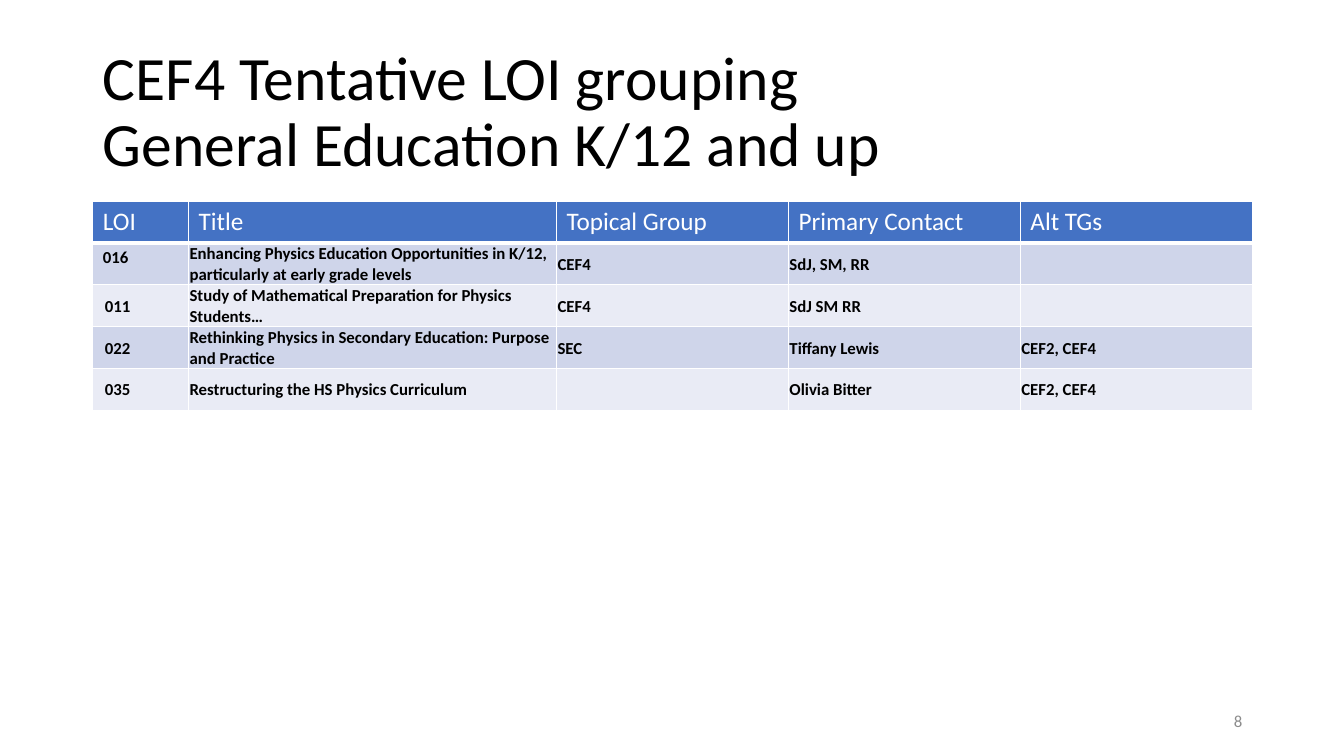
from dataclasses import dataclass

from lxml.etree import SubElement
from pptx import Presentation
from pptx.dml.color import RGBColor
from pptx.enum.text import MSO_ANCHOR, MSO_AUTO_SIZE, PP_ALIGN
from pptx.oxml.ns import qn
from pptx.util import Inches, Pt


@dataclass(frozen=True)
class Theme:
    font: str = "Calibri"
    ink: str = "000000"
    white: str = "FFFFFF"
    grey: str = "8C8C8C"
    header: str = "4472C4"
    bands: tuple = ("CFD5EA", "E9EBF5")
    title_size: int = 44
    header_size: int = 18
    body_size: int = 12


THEME = Theme()

COLUMNS = {"LOI": 0.95, "Title": 3.65, "Topical Group": 2.3,
           "Primary Contact": 2.3, "Alt TGs": 2.3}
LETTERS = [
    ("016", "Enhancing Physics Education Opportunities in K/12, "
            "particularly at early grade levels", "CEF4", "SdJ, SM, RR", ""),
    ("011", "Study of Mathematical Preparation for Physics Students…",
     "CEF4", "SdJ SM RR", ""),
    ("022", "Rethinking Physics in Secondary Education: Purpose and Practice",
     "SEC", "Tiffany Lewis", "CEF2, CEF4"),
    ("035", "Restructuring the HS Physics Curriculum",
     "", "Olivia Bitter", "CEF2, CEF4"),
]


def add_run(p, text, size, color, bold=False):
    r = p.add_run()
    r.text = text
    r.font.name = THEME.font
    r.font.size = Pt(size)
    r.font.bold = bold
    r.font.color.rgb = RGBColor.from_string(color)


def set_borders(cell, bottom=1):
    """Give the cell white edges; call before filling, as edges precede the fill."""
    tc_pr = cell._tc.get_or_add_tcPr()
    for edge, width in (("L", 1), ("R", 1), ("T", 1), ("B", bottom)):
        line = SubElement(tc_pr, qn(f"a:ln{edge}"), w=str(Pt(width)))
        fill = SubElement(line, qn("a:solidFill"))
        SubElement(fill, qn("a:srgbClr"), val=THEME.white)


def fill_cell(cell, color):
    cell.fill.solid()
    cell.fill.fore_color.rgb = RGBColor.from_string(color)


def set_tight_margins(cell, left):
    cell.vertical_anchor = MSO_ANCHOR.MIDDLE
    cell.margin_left = Inches(left)
    cell.margin_right = cell.margin_top = Inches(0.01)
    cell.margin_bottom = 0


def add_title(s, lines, left, top, width, height):
    title = s.shapes.title
    title.left, title.top = Inches(left), Inches(top)
    title.width, title.height = Inches(width), Inches(height)
    tf = title.text_frame
    tf.word_wrap = True
    tf.auto_size = MSO_AUTO_SIZE.NONE
    tf.vertical_anchor = MSO_ANCHOR.MIDDLE
    p = tf.paragraphs[0]
    p.alignment = PP_ALIGN.LEFT
    p.line_spacing = 0.9
    for i, line in enumerate(lines):
        if i:
            p.add_line_break()
        add_run(p, line, THEME.title_size, THEME.ink)


def add_letters_table(s, left, top, width, row_height):
    rows = len(LETTERS) + 1
    table = s.shapes.add_table(rows, len(COLUMNS), Inches(left), Inches(top),
                               Inches(width), Inches(row_height * rows)).table
    for row in table.rows:
        row.height = Inches(row_height)
    for c, (heading, share) in enumerate(COLUMNS.items()):
        table.columns[c].width = Inches(width * share / sum(COLUMNS.values()))
        cell = table.cell(0, c)
        set_borders(cell, bottom=3)
        fill_cell(cell, THEME.header)
        add_run(cell.text_frame.paragraphs[0], heading,
                THEME.header_size, THEME.white)
    for i, letter in enumerate(LETTERS):
        for c, text in enumerate(letter):
            cell = table.cell(i + 1, c)
            set_borders(cell)
            fill_cell(cell, THEME.bands[i % 2])
            if not text:
                continue
            if (i, c) != (0, 0):
                set_tight_margins(cell, 0.12 if c == 0 else 0.01)
            add_run(cell.text_frame.paragraphs[0], text,
                    THEME.body_size, THEME.ink, bold=True)


def add_page_number(s, number, left, top, width, height):
    box = s.shapes.add_textbox(Inches(left), Inches(top),
                               Inches(width), Inches(height))
    tf = box.text_frame
    tf.word_wrap = True
    tf.vertical_anchor = MSO_ANCHOR.MIDDLE
    p = tf.paragraphs[0]
    p.alignment = PP_ALIGN.RIGHT
    add_run(p, number, THEME.body_size, THEME.grey)


def main():
    prs = Presentation()
    prs.slide_width, prs.slide_height = Inches(13.33), Inches(7.5)
    s = prs.slides.add_slide(prs.slide_layouts[5])
    add_title(s, ("CEF4 Tentative LOI grouping", "General Education K/12 and up"),
              0.92, 0.4, 11.5, 1.45)
    add_letters_table(s, 0.92, 2, 11.5, 0.41)
    add_page_number(s, "8", 9.42, 6.95, 3, 0.4)
    prs.save("out.pptx")


if __name__ == "__main__":
    main()
